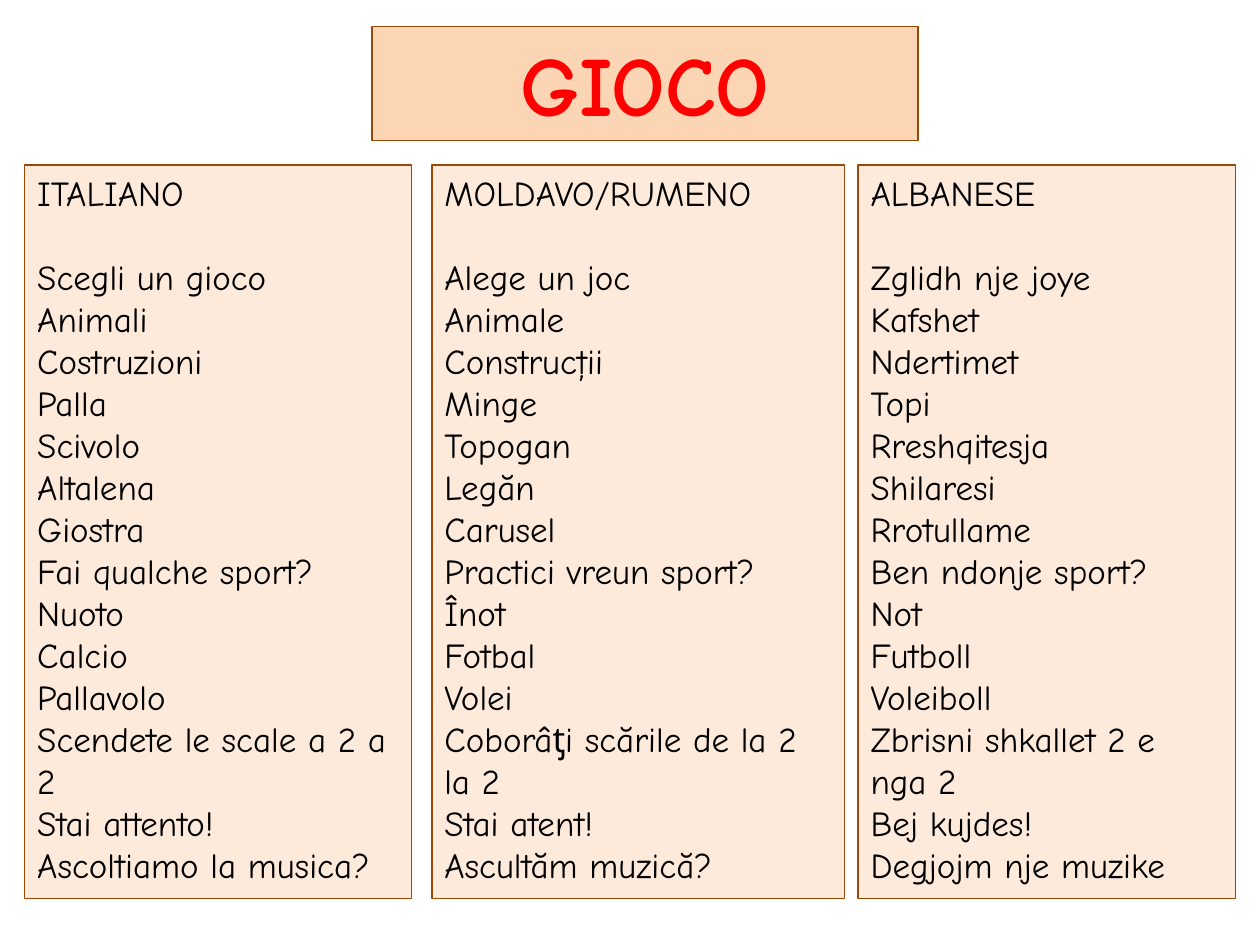
import pptx
import pptx.dml.color
import pptx.enum.text
import pptx.util
from dataclasses import dataclass

Pt = pptx.util.Pt
Align = pptx.enum.text.PP_ALIGN


@dataclass(frozen=True)
class Theme:
    font: str = "Comic Neue"
    title_size: int = 48
    body_size: int = 20
    title_fill: str = "FCD5B5"
    column_fill: str = "FDEADA"
    border: str = "984807"
    title_text: str = "FF0000"
    body_text: str = "000000"


theme = Theme()


def color(value):
    return pptx.dml.color.RGBColor.from_string(value)


def add_panel(page, frame, fill, lines, size, text_color, bold=False, align=Align.LEFT):
    """Add a bordered text box with one paragraph per line; return its paragraphs."""
    box = page.shapes.add_textbox(*(Pt(length) for length in frame))
    box.fill.solid()
    box.fill.fore_color.rgb = color(fill)
    box.line.color.rgb = color(theme.border)
    box.line.width = Pt(0.75)
    text = box.text_frame
    text.word_wrap = True
    text.text = "\n".join(lines)
    for para in text.paragraphs:
        para.alignment = align
        para.font.name = theme.font
        para.font.size = Pt(size)
        para.font.bold = bold
        para.font.color.rgb = color(text_color)
    return text.paragraphs


deck = pptx.Presentation()
deck.slide_width, deck.slide_height = Pt(720), Pt(540)
page = deck.slides.add_slide(deck.slide_layouts[6])

add_panel(page, (212.5, 15, 312, 65.5), theme.title_fill, ["GIOCO"],
          theme.title_size, theme.title_text, bold=True, align=Align.CENTER)

column_top, column_height = 94.3, 419
heading_gap = 24

# Left edge, width, heading, phrases
columns = [
    (14.2, 221, "ITALIANO", [
        "Scegli un gioco", "Animali", "Costruzioni", "Palla", "Scivolo",
        "Altalena", "Giostra", "Fai qualche sport?", "Nuoto", "Calcio",
        "Pallavolo", "Scendete le scale a 2 a 2", "Stai attento!",
        "Ascoltiamo la musica?"]),
    (246.8, 235.6, "MOLDAVO/RUMENO", [
        "Alege un joc", "Animale", "Construcții", "Minge", "Topogan",
        "Legăn", "Carusel", "Practici vreun sport?", "Înot", "Fotbal",
        "Volei", "Coborâƫi scările de la 2 la 2", "Stai atent!",
        "Ascultăm muzică?"]),
    (490.4, 215.5, "ALBANESE", [
        "Zglidh nje joye", "Kafshet", "Ndertimet", "Topi", "Rreshqitesja",
        "Shilaresi", "Rrotullame", "Ben ndonje sport?", "Not", "Futboll",
        "Voleiboll", "Zbrisni shkallet 2 e nga 2", "Bej kujdes!",
        "Degjojm nje muzike"]),
]

for left, width, heading, phrases in columns:
    paragraphs = add_panel(page, (left, column_top, width, column_height),
                           theme.column_fill, [heading, *phrases],
                           theme.body_size, theme.body_text)
    paragraphs[0].space_after = Pt(heading_gap)

deck.save("out.pptx")
